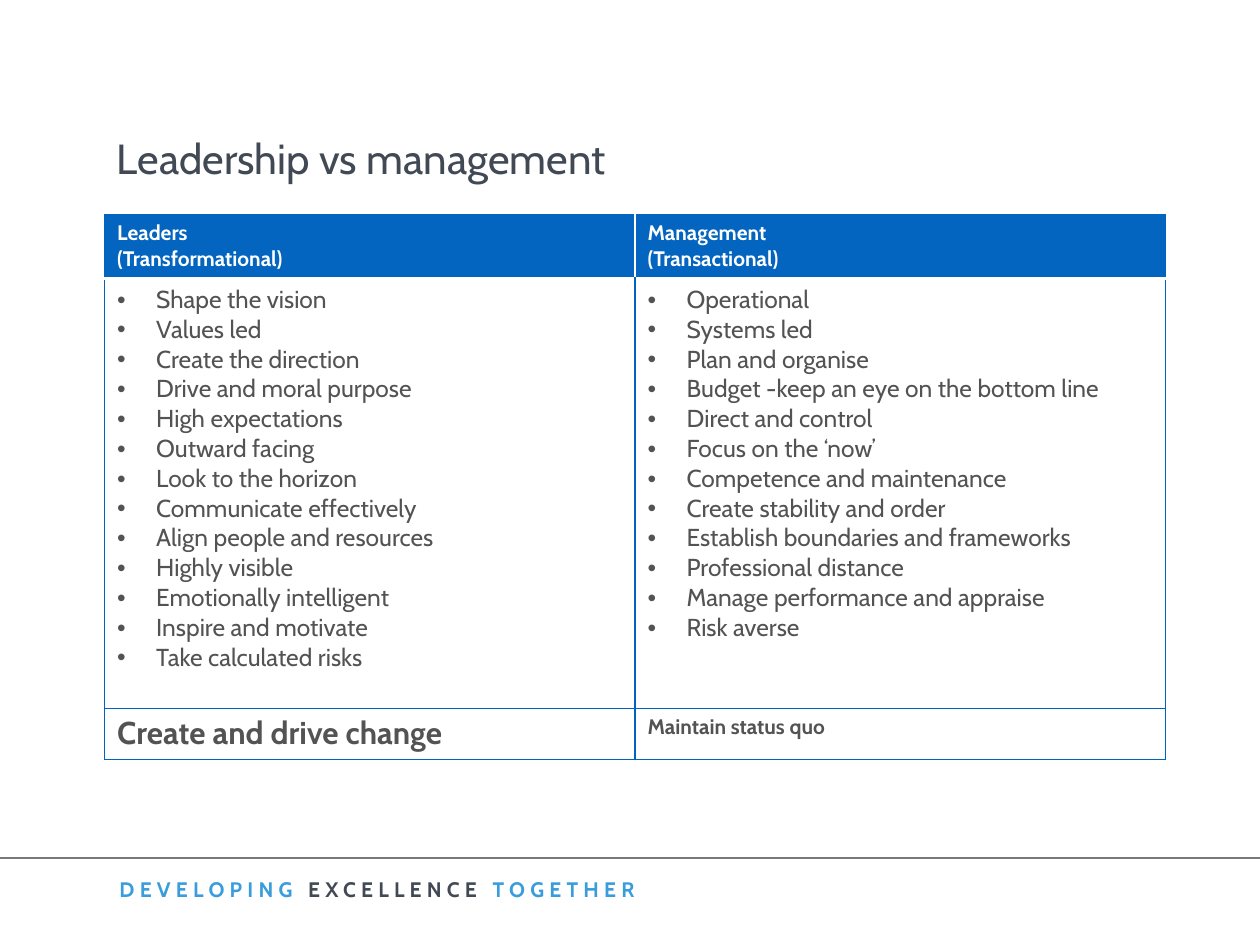
import lxml.etree
import pptx
import pptx.dml.color
import pptx.enum.shapes
import pptx.enum.text
import pptx.oxml.ns
import pptx.util
from pptx.util import Inches

COLORS = {
    "title": "414954", "accent": "399DDC", "rule": "787979",
    "header": "0365C0", "border": "0063BF", "body": "535353", "white": "FFFFFF",
}
FONT = "Cabin"
TITLE = "Leadership vs management"
MOTTO = [("DEVELOPING", "accent"), (" EXCELLENCE ", "title"), ("TOGETHER", "accent")]
HEADERS = [["Leaders", "(Transformational)"], ["Management", "(Transactional)"]]
TRAITS = [
    ["Shape the vision", "Values led", "Create the direction", "Drive and moral purpose",
     "High expectations", "Outward facing", "Look to the horizon",
     "Communicate effectively", "Align people and resources", "Highly visible",
     "Emotionally intelligent", "Inspire and motivate", "Take calculated risks"],
    ["Operational", "Systems led", "Plan and organise",
     "Budget -keep an eye on the bottom line", "Direct and control",
     "Focus on the ‘now’", "Competence and maintenance", "Create stability and order",
     "Establish boundaries and frameworks", "Professional distance",
     "Manage performance and appraise", "Risk averse"],
]
SUMMARIES = [("Create and drive change", 18), ("Maintain status quo", 12)]
ROW_HEIGHTS = [0.51, 3.41, 0.41]
COLUMN_WIDTH = 4.21


def rgb(name):
    return pptx.dml.color.RGBColor.from_string(COLORS[name])


def add_child(parent, tag, **attributes):
    child = lxml.etree.SubElement(parent, pptx.oxml.ns.qn(tag))
    for key, value in attributes.items():
        child.set(key, str(value))
    return child


def add_text(paragraph, text, size=12, color="body", bold=False, spacing=0):
    run = paragraph.add_run()
    run.text = text
    run.font.name = FONT
    run.font.size = pptx.util.Pt(size)
    run.font.bold = bold
    run.font.color.rgb = rgb(color)
    if spacing:
        run.font._element.set("spc", str(spacing * 100))


def add_text_box(slide, left, top, width, height, runs, wrap=True, anchor="TOP", **text_format):
    shape = slide.shapes.add_textbox(Inches(left), Inches(top), Inches(width), Inches(height))
    frame = shape.text_frame
    frame.word_wrap = wrap
    frame.vertical_anchor = getattr(pptx.enum.text.MSO_ANCHOR, anchor)
    for text, color in runs:
        add_text(frame.paragraphs[0], text, color=color, **text_format)


def fill_cell(cell, lines, fill="white", bulleted=False, **text_format):
    cell.fill.solid()
    cell.fill.fore_color.rgb = rgb(fill)
    frame = cell.text_frame
    for index, line in enumerate(lines):
        paragraph = frame.add_paragraph() if index else frame.paragraphs[0]
        if bulleted:
            properties = paragraph._p.get_or_add_pPr()
            properties.set("marL", str(Inches(0.31)))
            properties.set("indent", str(-Inches(0.31)))
            add_child(properties, "a:buFont", typeface="Arial")
            add_child(properties, "a:buChar", char="•")
        add_text(paragraph, line, **text_format)


def set_borders(cell, borders):
    properties = cell._tc.get_or_add_tcPr()
    for index, (side, color, width) in enumerate(borders):
        line = add_child(properties, f"a:ln{side}", w=pptx.util.Pt(width))
        add_child(add_child(line, "a:solidFill"), "a:srgbClr", val=COLORS[color])
        properties.insert(index, line)


def add_comparison(slide):
    frame = slide.shapes.add_table(
        len(ROW_HEIGHTS), len(HEADERS), Inches(0.83), Inches(1.7),
        Inches(COLUMN_WIDTH * len(HEADERS)), Inches(sum(ROW_HEIGHTS)))
    table = frame.table
    for row, height in zip(table.rows, ROW_HEIGHTS):
        row.height = Inches(height)
    for column_index, column in enumerate(table.columns):
        column.width = Inches(COLUMN_WIDTH)
        header, traits, summary = [table.cell(row, column_index) for row in range(3)]
        text, size = SUMMARIES[column_index]
        fill_cell(header, HEADERS[column_index], fill="header", color="white", bold=True)
        fill_cell(traits, TRAITS[column_index], bulleted=True, size=14)
        fill_cell(summary, [text], size=size, bold=True)
        outer_side = "R" if column_index else "L"
        divider = ("white", 2)
        edge = ("border", 0.75)
        set_borders(header, [(outer_side, *edge), ("T", *edge), ("B", *divider)])
        set_borders(traits, [("L", *edge), ("R", *edge), ("T", *divider), ("B", *edge)])
        set_borders(summary, [(side, *edge) for side in "LRTB"])


def add_rule(slide):
    rule = slide.shapes.add_connector(
        pptx.enum.shapes.MSO_CONNECTOR.STRAIGHT,
        Inches(0), Inches(6.81), Inches(10), Inches(6.81))
    rule.line.color.rgb = rgb("rule")
    rule.line.width = pptx.util.Pt(0.75)
    add_child(rule._element.spPr, "a:effectLst")


def main():
    presentation = pptx.Presentation()
    presentation.slide_width = Inches(10)
    presentation.slide_height = Inches(7.5)
    slide = presentation.slides.add_slide(presentation.slide_layouts[6])
    add_rule(slide)
    add_text_box(slide, 0.85, 6.91, 5.44, 0.44, MOTTO, wrap=False, bold=True, spacing=3)
    add_text_box(slide, 0.83, 0.94, 6.77, 0.63, [(TITLE, "title")], anchor="MIDDLE", size=24)
    add_comparison(slide)
    presentation.save("out.pptx")


if __name__ == "__main__":
    main()
